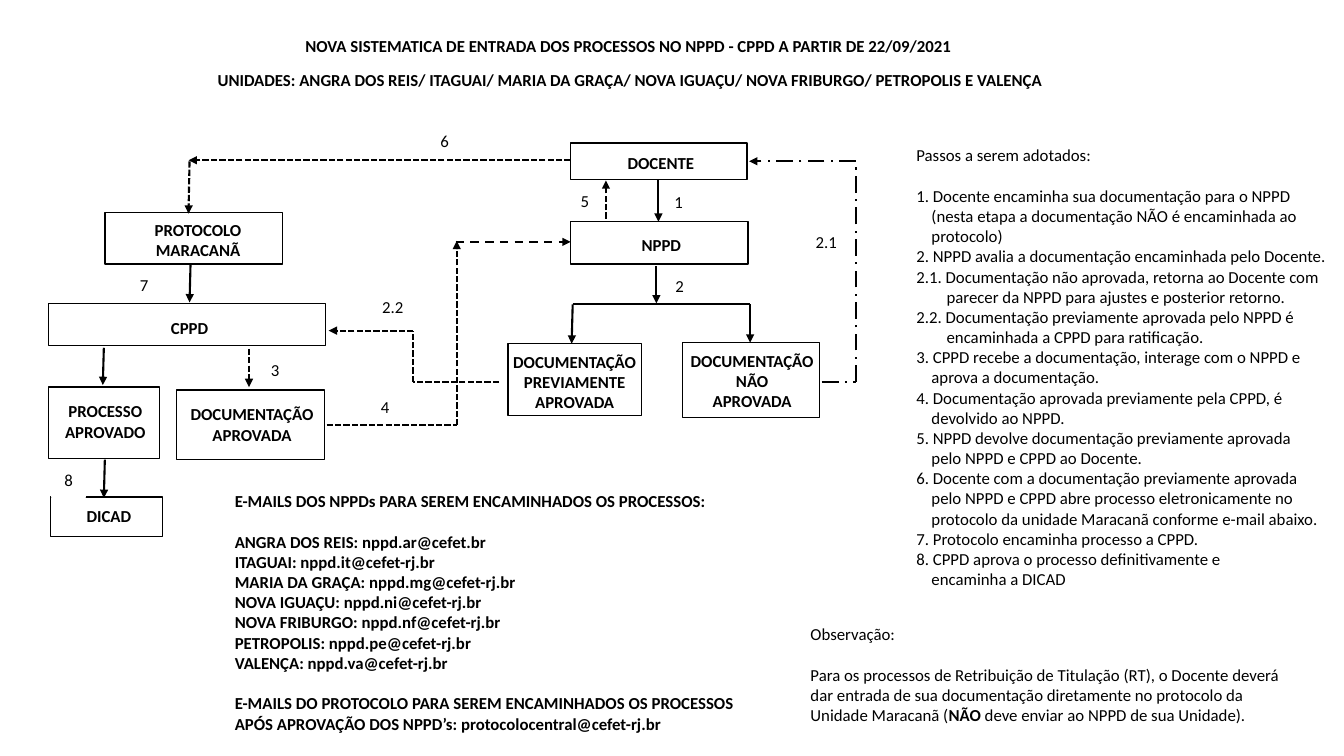
from lxml import etree
from pptx import Presentation
from pptx import util as u
from pptx.dml.color import RGBColor
from pptx.enum import dml, shapes, text
from pptx.oxml.ns import qn

BLACK = RGBColor(0, 0, 0)
WHITE = RGBColor(255, 255, 255)
SOLID = dml.MSO_LINE.SOLID
DASH = dml.MSO_LINE.DASH
SHORT_DASH = dml.MSO_LINE.SQUARE_DOT
DASH_DOT = dml.MSO_LINE.LONG_DASH_DOT
CENTER = text.PP_ALIGN.CENTER
LEFT = text.PP_ALIGN.LEFT
LINE_HEIGHT = u.Pt(14.65)

TITLES = [
    ((2.93, 0.31, 6.77, 0.3), "NOVA SISTEMATICA DE ENTRADA DOS PROCESSOS NO NPPD - CPPD A PARTIR DE 22/09/2021"),
    ((2.06, 0.64, 8.44, 0.3), "UNIDADES: ANGRA DOS REIS/ ITAGUAI/ MARIA DA GRAÇA/ NOVA IGUAÇU/ NOVA FRIBURGO/ PETROPOLIS E VALENÇA"),
]

NODES = [
    ((1.04, 2.11, 1.76, 0.51), (1.43, 2.13, 1.07, 0.5), "PROTOCOLO\nMARACANÃ"),
    ((0.48, 3.01, 2.75, 0.42), (1.59, 3.1, 0.58, 0.3), "CPPD"),
    ((0.5, 4.93, 1.11, 0.39), (0.74, 4.97, 0.68, 0.3), "DICAD"),
    ((0.48, 3.84, 1.1, 0.71), (0.5, 3.93, 1.09, 0.5), "PROCESSO\nAPROVADO"),
    ((1.75, 3.87, 1.47, 0.69), (1.77, 3.96, 1.46, 0.5), "DOCUMENTAÇÃO\nAPROVADA"),
    ((5.66, 1.42, 1.75, 0.36), (6.1, 1.47, 0.91, 0.3), "DOCENTE"),
    ((5.66, 2.2, 1.76, 0.42), (6.26, 2.28, 0.6, 0.3), "NPPD"),
    ((5.04, 3.41, 1.32, 0.71), (4.95, 3.44, 1.5, 0.71), "DOCUMENTAÇÃO\nPREVIAMENTE\nAPROVADA"),
    ((6.77, 3.4, 1.36, 0.74), (6.6, 3.43, 1.72, 0.71), "DOCUMENTAÇÃO\nNÃO\nAPROVADA"),
]

STEP_NUMBERS = [
    ("1", 6.56, 1.84, 0.34), ("2", 6.57, 2.67, 0.34), ("3", 2.56, 3.5, 0.34),
    ("4", 3.65, 3.87, 0.34), ("5", 5.63, 1.83, 0.34), ("6", 4.24, 1.23, 0.34),
    ("7", 1.26, 2.66, 0.34), ("8", 0.51, 4.6, 0.34),
    ("2.1", 7.94, 2.23, 0.51), ("2.2", 3.64, 2.88, 0.51),
]

ROUTES = [
    (SOLID, [(6.53, 1.78), (6.53, 2.2)]),
    (SOLID, [(6.51, 2.64), (6.51, 3.01)]),
    (SOLID, [(5.68, 3.02), (7.44, 3.02), (7.44, 3.4)]),
    (SOLID, [(5.68, 3.02), (5.67, 3.41)]),
    (SOLID, [(1.89, 2.62), (1.88, 3)]),
    (SOLID, [(1.03, 3.45), (1.02, 3.82)]),
    (SOLID, [(1.04, 4.56), (1.03, 4.94)]),
    (SHORT_DASH, [(6.01, 2.17), (6.01, 1.79)]),
    (SHORT_DASH, [(2.47, 3.46), (2.47, 3.84)]),
    (SHORT_DASH, [(5.66, 1.59), (1.87, 1.59)]),
    (SHORT_DASH, [(1.88, 1.6), (1.87, 2.12)]),
    (SHORT_DASH, [(4.95, 3.79), (4.1, 3.79), (4.1, 3.28), (3.26, 3.28)]),
    (SHORT_DASH, [(3.24, 4.22), (4.53, 4.22), (4.53, 2.39)]),
    (DASH, [(4.52, 2.4), (5.66, 2.4)]),
    (DASH_DOT, [(8.15, 3.79), (8.49, 3.79), (8.49, 1.6), (7.43, 1.6)]),
]

STEPS = [
    "Passos a serem adotados:",
    "1. Docente encaminha sua documentação para o NPPD\n(nesta etapa a documentação NÃO é encaminhada ao\nprotocolo)",
    "2. NPPD avalia a documentação encaminhada pelo Docente.",
    "2.1. Documentação não aprovada, retorna ao Docente com\nparecer da NPPD para ajustes e posterior retorno.",
    "2.2. Documentação previamente aprovada pelo NPPD é\nencaminhada a CPPD para ratificação.",
    "3. CPPD recebe a documentação, interage com o NPPD e\naprova a documentação.",
    "4. Documentação aprovada previamente pela CPPD, é\ndevolvido ao NPPD.",
    "5. NPPD devolve documentação previamente aprovada\npelo NPPD e CPPD ao Docente.",
    "6. Docente com a documentação previamente aprovada\npelo NPPD e CPPD abre processo eletronicamente no\nprotocolo da unidade Maracanã conforme e-mail abaixo.",
    "7. Protocolo encaminha processo a CPPD.",
    "8. CPPD aprova o processo definitivamente e\nencaminha a DICAD",
]

EMAILS = [
    "E-MAILS DOS NPPDs PARA SEREM ENCAMINHADOS OS PROCESSOS:",
    "ANGRA DOS REIS: nppd.ar@cefet.br",
    "ITAGUAI: nppd.it@cefet-rj.br",
    "MARIA DA GRAÇA: nppd.mg@cefet-rj.br",
    "NOVA IGUAÇU: nppd.ni@cefet-rj.br",
    "NOVA FRIBURGO: nppd.nf@cefet-rj.br",
    "PETROPOLIS: nppd.pe@cefet-rj.br",
    "VALENÇA: nppd.va@cefet-rj.br",
    "E-MAILS DO PROTOCOLO PARA SEREM ENCAMINHADOS OS PROCESSOS\nAPÓS APROVAÇÃO DOS NPPD’s: protocolocentral@cefet-rj.br",
]

REMARK = [
    "Observação:",
    "Para os processos de Retribuição de Titulação (RT), o Docente deverá dar entrada de sua "
    "documentação diretamente no protocolo da Unidade Maracanã (",
]


def apply(target, values):
    for name, value in values.items():
        setattr(target, name, value)


class Flowchart:
    font = {"name": "Calibri", "size": u.Pt(12)}

    def __init__(self, slide):
        self.slide = slide

    def style_run(self, run, bold):
        apply(run.font, {**self.font, "bold": bold})
        run.font.color.rgb = BLACK

    def fill_text(self, frame, paragraphs, bold=False, align=LEFT, wrap=True, gaps=()):
        frame.word_wrap = wrap
        for index, content in enumerate(paragraphs):
            line = frame.add_paragraph() if index else frame.paragraphs[0]
            line.text = content
            line.alignment = align
            if index in gaps:
                line.space_before = LINE_HEIGHT
            for run in line.runs:
                self.style_run(run, bold)
            for line_break in line._p.findall(qn("a:br")):
                etree.SubElement(line_break, qn("a:rPr"), sz="1200")
        return frame.paragraphs

    def text(self, place, paragraphs, **options):
        box = self.slide.shapes.add_textbox(*map(u.Inches, place))
        return box, self.fill_text(box.text_frame, paragraphs, **options)

    def rectangle(self, place, border):
        box = self.slide.shapes.add_shape(shapes.MSO_SHAPE.RECTANGLE, *map(u.Inches, place))
        box.shadow.inherit = False
        box.fill.solid()
        box.fill.fore_color.rgb = WHITE
        box.line.color.rgb = border
        box.line.width = u.Pt(1)
        return box

    def node(self, place, label_place, label):
        frame = self.rectangle(place, BLACK)
        caption, _ = self.text(label_place, [label], bold=True, align=CENTER, wrap=False)
        self.slide.shapes.add_group_shape([frame, caption])

    def step_number(self, number, left, top, width):
        box = self.rectangle((left, top, width, 0.33), WHITE)
        box.text_frame.vertical_anchor = text.MSO_ANCHOR.MIDDLE
        self.fill_text(box.text_frame, [number], align=CENTER)

    def route(self, dash, points):
        for start, end in zip(points, points[1:]):
            line = self.slide.shapes.add_connector(
                shapes.MSO_CONNECTOR.STRAIGHT, *map(u.Inches, start + end))
            apply(line.line, {"width": u.Pt(1.5), "dash_style": dash})
            line.line.color.rgb = BLACK
            properties = line._element.spPr
            etree.SubElement(properties, qn("a:effectLst"))
        etree.SubElement(properties.find(qn("a:ln")), qn("a:tailEnd"), type="triangle")

    def steps(self, place, paragraphs):
        _, lines = self.text(place, paragraphs, gaps=(1,))
        for line in lines[1:]:
            hang = u.Inches(0.3 if line.text.startswith(("2.1", "2.2")) else 0.15)
            for name, value in {"marL": hang, "indent": -hang}.items():
                line._p.get_or_add_pPr().set(name, str(value))

    def remark(self, place, paragraphs):
        _, lines = self.text(place, paragraphs, gaps=(1,))
        for words, bold in [("NÃO", True), (" deve enviar ao NPPD de sua Unidade).", False)]:
            run = lines[-1].add_run()
            run.text = words
            self.style_run(run, bold)


def main():
    deck = Presentation()
    apply(deck, {"slide_width": u.Inches(13.33), "slide_height": u.Inches(7.5)})
    chart = Flowchart(deck.slides.add_slide(deck.slide_layouts[6]))
    for place, title in TITLES:
        chart.text(place, [title], bold=True, wrap=False)
    for node in NODES:
        chart.node(*node)
    for number in STEP_NUMBERS:
        chart.step_number(*number)
    for route in ROUTES:
        chart.route(*route)
    chart.steps((8.99, 1.39, 4.35, 4.54), STEPS)
    chart.text((2.23, 4.82, 5.59, 2.52), EMAILS, bold=True, gaps=(1, 8))
    chart.remark((7.94, 6.14, 4.87, 1.11), REMARK)
    deck.save("out.pptx")


if __name__ == "__main__":
    main()
